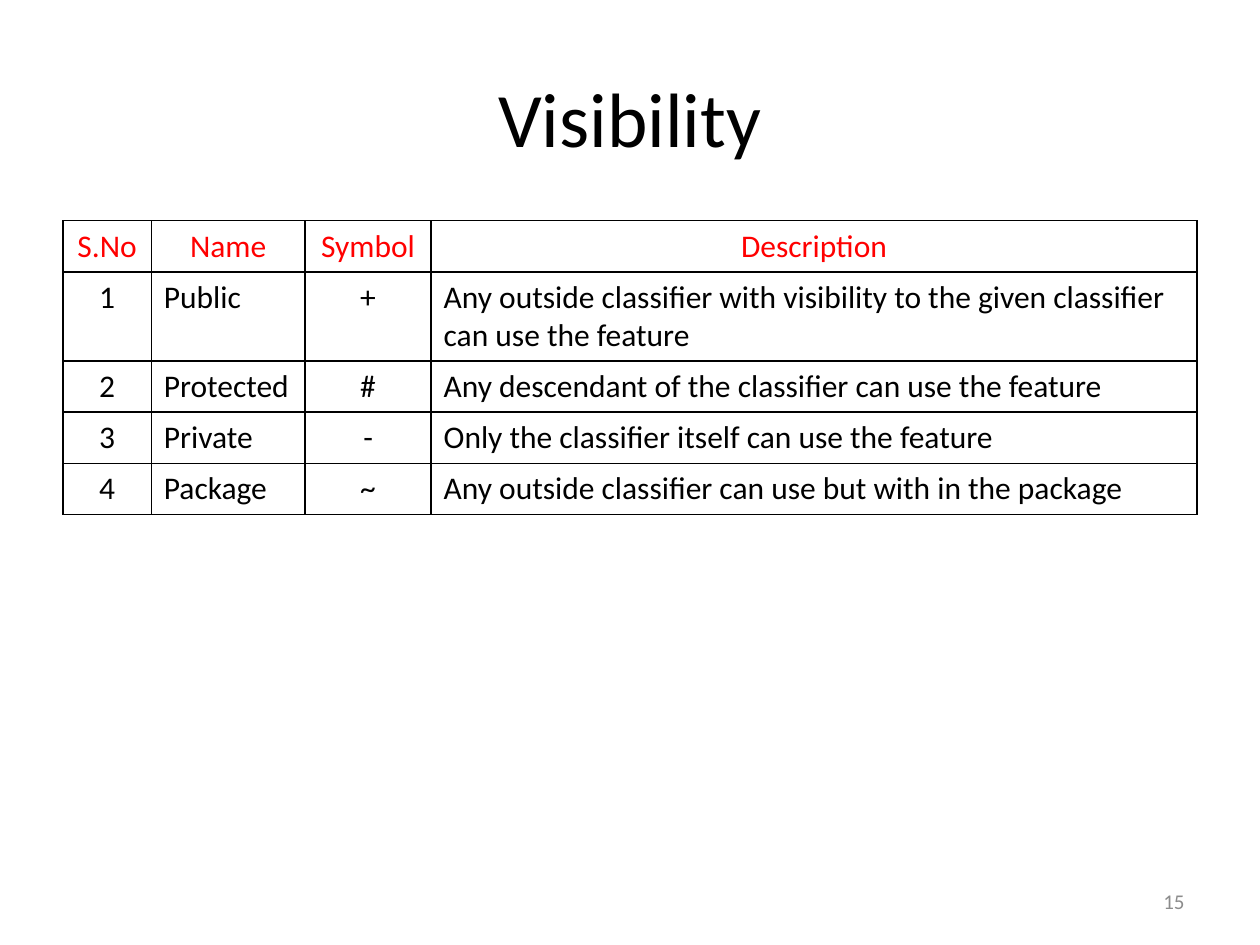
import dataclasses

import lxml.etree
import pptx
import pptx.dml.color
import pptx.enum.text
import pptx.oxml.ns
import pptx.util

Cm = pptx.util.Cm
Pt = pptx.util.Pt
Align = pptx.enum.text.PP_ALIGN


@dataclasses.dataclass(frozen=True)
class Theme:
    font: str = "Calibri"
    ink: str = "000000"
    heading: str = "FF0000"
    muted: str = "8C8C8C"
    paper: str = "FFFFFF"
    title_size: int = 44
    table_size: int = 18
    number_size: int = 12
    border_width: int = 1


THEME = Theme()

HEADINGS = ("S.No", "Name", "Symbol", "Description")
VISIBILITIES = (
    ("Public", "+", "Any outside classifier with visibility to the given classifier can use the feature"),
    ("Protected", "#", "Any descendant of the classifier can use the feature"),
    ("Private", "-", "Only the classifier itself can use the feature"),
    ("Package", "~", "Any outside classifier can use but with in the package"),
)
COLUMN_WIDTHS = (1.78, 3.1, 2.54, 15.44)
COLUMN_ALIGNS = (Align.CENTER, Align.LEFT, Align.CENTER, Align.LEFT)
ROW_HEIGHTS = (1.03, 1.8, 1.03, 1.03, 1.03)


def write(frame, words, size, color, align):
    paragraph = frame.paragraphs[0]
    paragraph.alignment = align
    run = paragraph.add_run()
    run.text = words
    run.font.name = THEME.font
    run.font.size = Pt(size)
    run.font.color.rgb = pptx.dml.color.RGBColor.from_string(color)


def add_label(slide, box, words, size, color, align):
    frame = slide.shapes.add_textbox(*map(Cm, box)).text_frame
    frame.word_wrap = True
    frame.vertical_anchor = pptx.enum.text.MSO_ANCHOR.MIDDLE
    write(frame, words, size, color, align)


def draw_borders(cell):
    qn = pptx.oxml.ns.qn
    properties = cell._tc.get_or_add_tcPr()
    for side in ("a:lnL", "a:lnR", "a:lnT", "a:lnB"):
        line = lxml.etree.SubElement(properties, qn(side), w=str(Pt(THEME.border_width)))
        fill = lxml.etree.SubElement(line, qn("a:solidFill"))
        lxml.etree.SubElement(fill, qn("a:srgbClr"), val=THEME.ink)


def fill_cell(cell, words, color, align):
    draw_borders(cell)
    cell.fill.solid()
    cell.fill.fore_color.rgb = pptx.dml.color.RGBColor.from_string(THEME.paper)
    write(cell.text_frame, words, THEME.table_size, color, align)


def add_visibility_table(slide, left, top):
    size = (sum(COLUMN_WIDTHS), sum(ROW_HEIGHTS))
    table = slide.shapes.add_table(
        len(ROW_HEIGHTS), len(COLUMN_WIDTHS), *map(Cm, (left, top, *size))
    ).table
    for column, width in zip(table.columns, COLUMN_WIDTHS):
        column.width = Cm(width)
    for row, height in zip(table.rows, ROW_HEIGHTS):
        row.height = Cm(height)

    for cell, heading in zip(table.rows[0].cells, HEADINGS):
        fill_cell(cell, heading, THEME.heading, Align.CENTER)
    for number, visibility in enumerate(VISIBILITIES, start=1):
        entries = (str(number), *visibility)
        for cell, entry, align in zip(table.rows[number].cells, entries, COLUMN_ALIGNS):
            fill_cell(cell, entry, THEME.ink, align)


def main():
    deck = pptx.Presentation()
    deck.slide_width, deck.slide_height = Cm(25.4), Cm(19.05)
    slide = deck.slides.add_slide(deck.slide_layouts[6])
    add_label(slide, (1.27, 0.76, 22.86, 3.18), "Visibility",
              THEME.title_size, THEME.ink, Align.CENTER)
    add_visibility_table(slide, 1.27, 4.45)
    add_label(slide, (18.2, 17.65, 5.93, 1.02), "15",
              THEME.number_size, THEME.muted, Align.RIGHT)
    deck.save("out.pptx")


if __name__ == "__main__":
    main()
